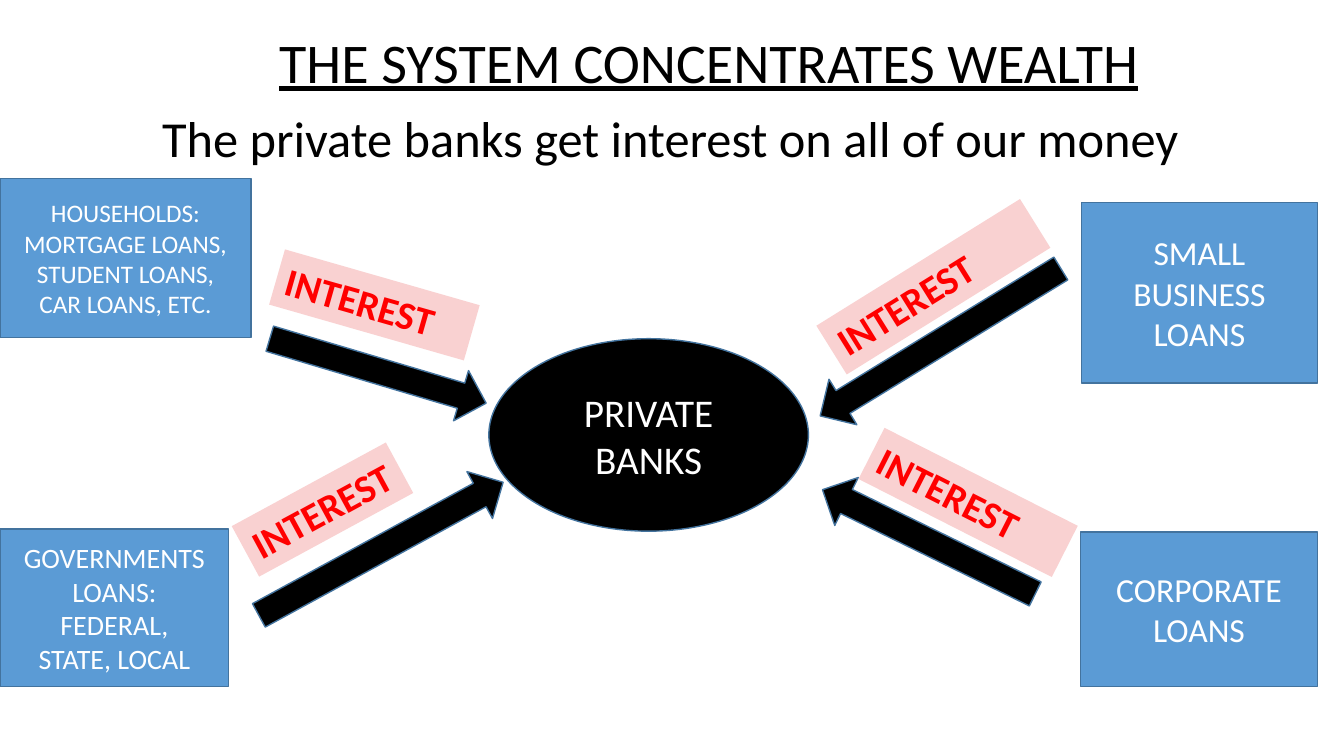
from pptx import Presentation
from pptx.dml.color import RGBColor
from pptx.enum.shapes import MSO_SHAPE
from pptx.enum.text import MSO_ANCHOR, MSO_AUTO_SIZE, PP_ALIGN
from pptx.util import Inches, Pt

RECTANGLE, OVAL = MSO_SHAPE.RECTANGLE, MSO_SHAPE.OVAL
PROCESS, ARROW = MSO_SHAPE.FLOWCHART_PROCESS, MSO_SHAPE.RIGHT_ARROW
LEFT, CENTER = PP_ALIGN.LEFT, PP_ALIGN.CENTER
TOP, MIDDLE = MSO_ANCHOR.TOP, MSO_ANCHOR.MIDDLE
FIXED, GROW = MSO_AUTO_SIZE.NONE, MSO_AUTO_SIZE.SHAPE_TO_FIT_TEXT

COLUMNS, ROWS = 160, 90
TITLE_ONLY = 5
BLACK, WHITE, RED = "000000", "FFFFFF", "FF0000"
BLUE, OUTLINE, PINK = "5B9BD5", "43739E", "F9D1D1"

BORROWERS = [
    ((0, 21.24, 29.88, 18.96), 18,
     ["HOUSEHOLDS:", "MORTGAGE LOANS,", "STUDENT LOANS,", "CAR LOANS, ETC."]),
    ((0, 63, 27.24, 18.72), 20,
     ["GOVERNMENTS LOANS:", "FEDERAL,", "STATE, LOCAL"]),
    ((128.76, 24.12, 28.08, 21.48), 24, ["SMALL", "BUSINESS", "LOANS"]),
    ((128.64, 63.36, 28.2, 18.36), 24, ["CORPORATE", "LOANS"]),
]
PAYMENTS = [
    ((96.48, 61.32, 28.2, 6.36), 206.1),
    ((28.8, 62.16, 33.12, 6.36), 331.4),
    ((95.16, 37.56, 33.6, 6.36), 148.5),
    ((31.56, 41.04, 26.88, 6.24), 16.6),
]
INTEREST_TAGS = [
    ((32.52, 32.88, 24.12, 6.84), 16, True),
    ((96.84, 30.72, 28.56, 6.84), 328.1, True),
    ((102.36, 56.4, 25.8, 6.84), 26.9, True),
    ((27.96, 57.24, 20.88, 6.84), 331.5, False),
]


def color(value):
    """Turn a hex string into a colour."""
    return RGBColor.from_string(value)


def apply(target, **values):
    """Set each given attribute on the target."""
    for name, value in values.items():
        setattr(target, name, value)


class Diagram:
    """Draw the slide's elements on a grid in one style."""

    def __init__(self, deck):
        """Add a title-only slide to the deck."""
        self.cell_width = deck.slide_width / COLUMNS
        self.cell_height = deck.slide_height / ROWS
        self.slide = deck.slides.add_slide(deck.slide_layouts[TITLE_ONLY])

    def place(self, cells):
        """Convert grid cells to left, top, width and height."""
        units = (self.cell_width, self.cell_height) * 2
        return [round(cell * unit) for cell, unit in zip(cells, units)]

    def set_text(self, shape, lines, size, ink, align=LEFT, anchor=TOP,
                 fit=GROW, wrap=True, **style):
        """Fill a shape with formatted paragraphs."""
        frame = shape.text_frame
        frame.text = "\n".join(lines)
        apply(frame, word_wrap=wrap, auto_size=fit, vertical_anchor=anchor)
        for paragraph in frame.paragraphs:
            apply(paragraph, alignment=align, line_spacing=1.0)
            font = paragraph.runs[0].font
            apply(font, name="Calibri", size=Pt(size), **style)
            font.color.rgb = color(ink)

    def title(self, cells, text):
        """Move and format the title placeholder."""
        heading = self.slide.shapes.title
        bounds = zip(("left", "top", "width", "height"), self.place(cells))
        apply(heading, **dict(bounds))
        self.set_text(heading, [text], 40, BLACK, underline=True)

    def block(self, kind, cells, fill, outline=None, angle=0):
        """Add a flat preset shape."""
        shape = self.slide.shapes.add_shape(kind, *self.place(cells))
        shape.rotation = angle
        shape.shadow.inherit = False
        shape.fill.solid()
        shape.fill.fore_color.rgb = color(fill)
        if outline:
            shape.line.color.rgb = color(outline)
            shape.line.width = Pt(1)
        else:
            shape.line.fill.background()
        return shape

    def arrow(self, cells, angle):
        """Add a black block arrow."""
        self.block(ARROW, cells, BLACK, OUTLINE, angle)

    def node(self, kind, cells, fill, size, lines):
        """Add an outlined shape with centred white text."""
        shape = self.block(kind, cells, fill, OUTLINE)
        self.set_text(shape, lines, size, WHITE, CENTER, MIDDLE, FIXED)

    def tag(self, cells, angle, wrap):
        """Add a tilted interest label."""
        shape = self.block(RECTANGLE, cells, PINK, angle=angle)
        self.set_text(shape, ["INTEREST"], 28, RED, wrap=wrap, bold=True)

    def subtitle(self, cells, text):
        """Add the statement below the title."""
        shape = self.block(RECTANGLE, cells, WHITE)
        self.set_text(shape, [text], 36, BLACK, wrap=False)


def main():
    """Build and save the slide."""
    deck = Presentation()
    apply(deck, slide_width=Inches(13.33), slide_height=Inches(7.5))
    diagram = Diagram(deck)
    diagram.title((32.04, 2.64, 105.36, 9.24), "THE SYSTEM CONCENTRATES WEALTH")
    for cells, angle in PAYMENTS:
        diagram.arrow(cells, angle)
    diagram.node(OVAL, (58.2, 40.32, 38.04, 22.92), BLACK, 28, ["PRIVATE", "BANKS"])
    for cells, size, lines in BORROWERS:
        diagram.node(PROCESS, cells, BLUE, size, lines)
    for cells, angle, wrap in INTEREST_TAGS:
        diagram.tag(cells, angle, wrap)
    diagram.subtitle((18.12, 12.12, 124.44, 8.52),
                     "The private banks get interest on all of our money")
    deck.save("out.pptx")


if __name__ == "__main__":
    main()
